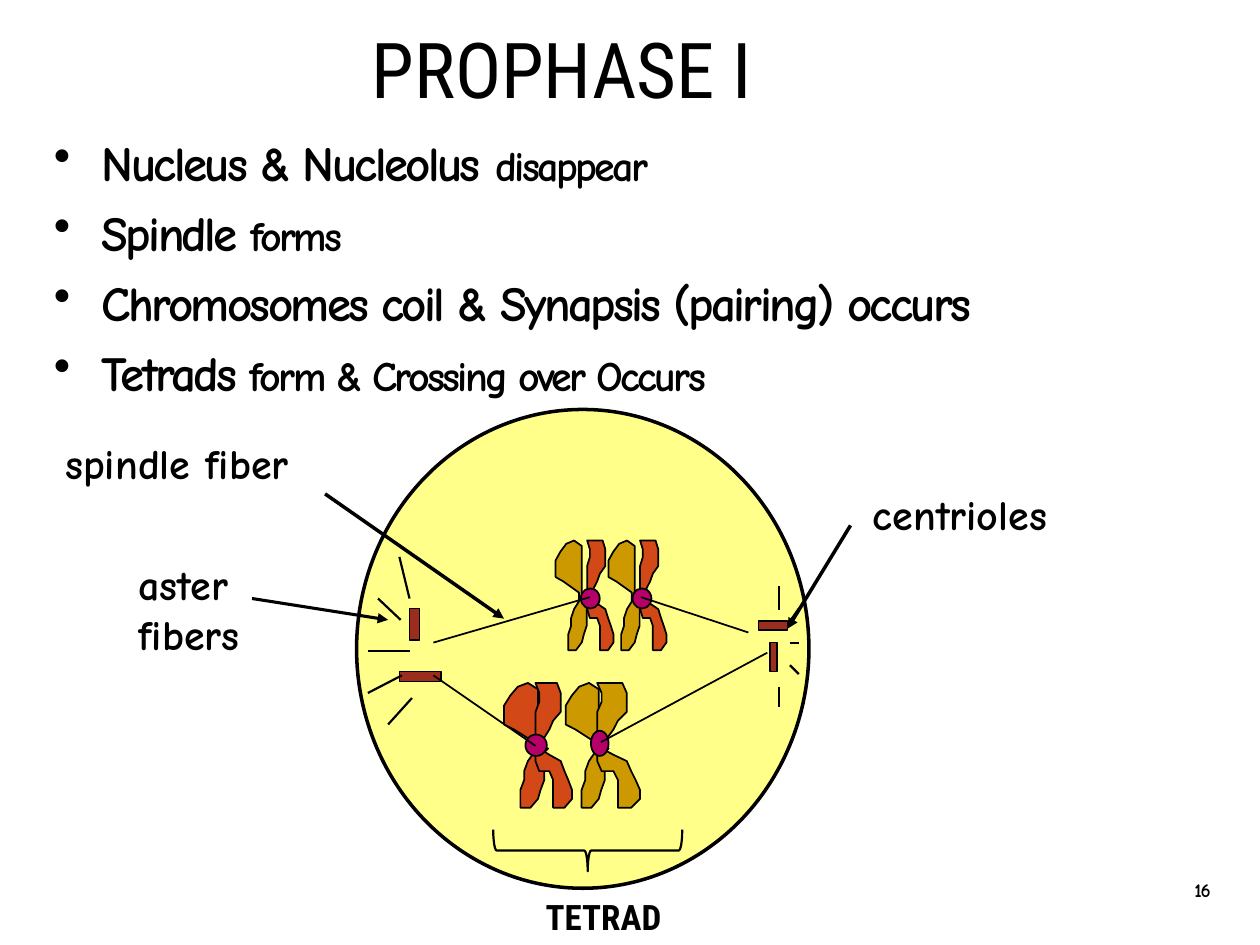
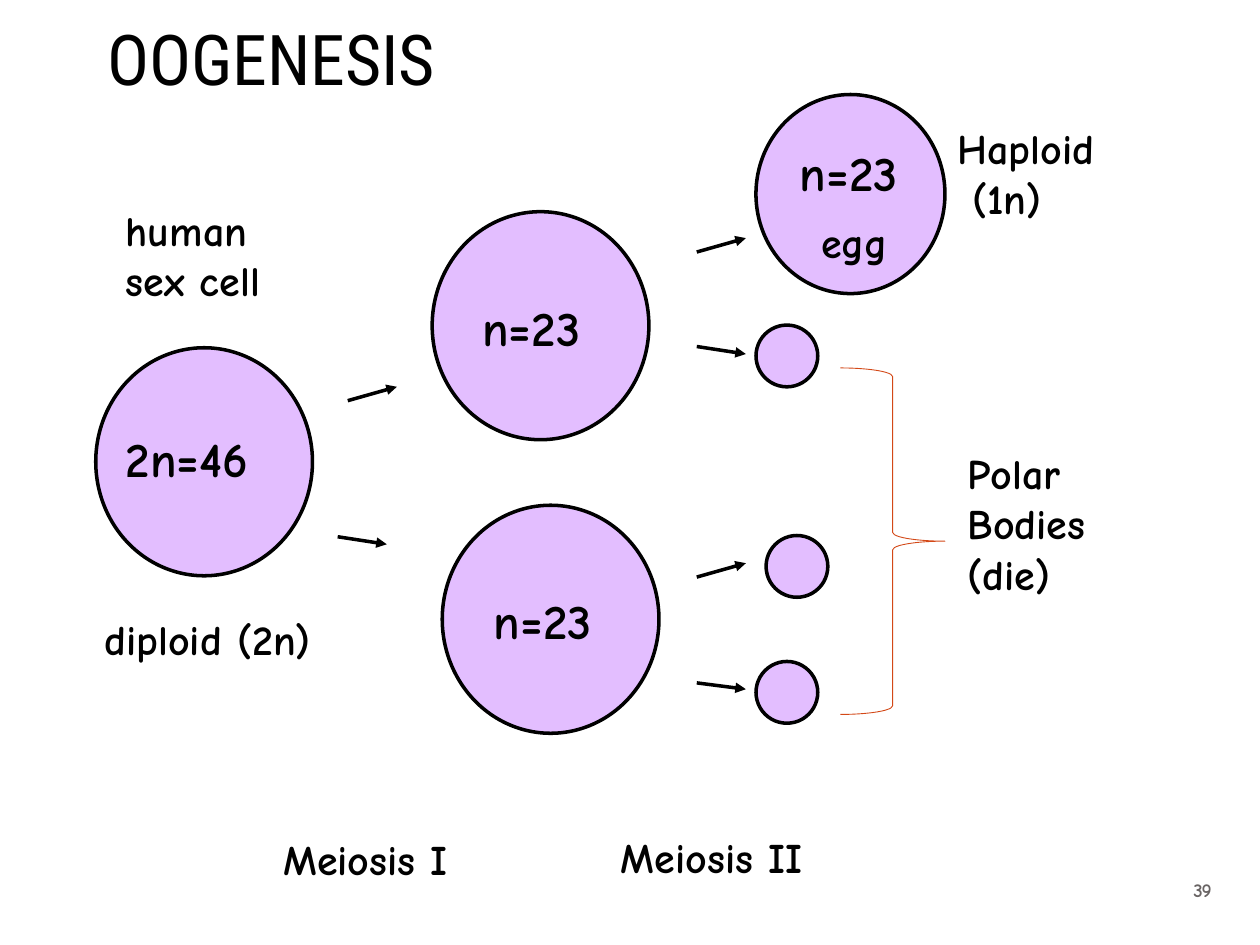
from lxml import etree
from pptx import Presentation
from pptx.dml.color import RGBColor
from pptx.enum import shapes, text
from pptx.oxml import ns
from pptx.util import Inches, Pt

# Shared look
BODY_FONT, TITLE_FONT = "Comic Neue", "Roboto Condensed"
BLACK, GREY = "000000", "696464"
YELLOW, LILAC = "FFFF89", "E3BEFF"
RED, GOLD, BROWN, MAGENTA = "D34817", "CC9900", "9B2D1F", "B50069"
OVAL = shapes.MSO_SHAPE.OVAL
rgb = RGBColor.from_string


def add_shape(slide, preset, box, fill=None, width=1, line=BLACK):
    """Place a preset shape, or paint a finished one passed in its place."""
    shape = preset
    if box:
        shape = slide.shapes.add_shape(preset, *map(Inches, box))
    shape.shadow.inherit = False
    if fill:
        shape.fill.solid()
        shape.fill.fore_color.rgb = rgb(fill)
    else:
        shape.fill.background()
    shape.line.color.rgb = rgb(line)
    shape.line.width = Pt(width)
    return shape


def add_run(paragraph, words, size, font=BODY_FONT, bold=True, colour=BLACK, spacing=0):
    run = paragraph.add_run()
    run.text = words
    run.font.size = Pt(size)
    run.font.name = font
    run.font.bold = bold
    run.font.color.rgb = rgb(colour)
    if spacing:
        run.font._element.set("spc", str(round(spacing * 100)))


prs = Presentation()
prs.slide_width, prs.slide_height = Inches(10), Inches(7.5)
prophase, oogenesis = [prs.slides.add_slide(prs.slide_layouts[5]) for _ in range(2)]

# Titles and slide numbers
for slide, heading, size, align, box, number, number_colour in (
    (prophase, "PROPHASE I", 44, text.PP_ALIGN.CENTER, (0.5, 0.17, 7.92, 0.83), "16", BLACK),
    (oogenesis, "OOGENESIS", 40, text.PP_ALIGN.LEFT, (0.75, 0, 6, 1), "39", GREY),
):
    title = slide.shapes.title
    title.left, title.top, title.width, title.height = map(Inches, box)
    title.text_frame.auto_size = text.MSO_AUTO_SIZE.NONE
    title.text_frame.vertical_anchor = text.MSO_ANCHOR.MIDDLE
    line = title.text_frame.paragraphs[0]
    line.alignment = align
    line.line_spacing = 0.9
    add_run(line, heading, size, TITLE_FONT, bold=False)

    frame = slide.shapes.add_textbox(*map(Inches, (9.28, 6.86, 0.53, 0.4))).text_frame
    frame.word_wrap = True
    frame.vertical_anchor = text.MSO_ANCHOR.MIDDLE
    frame.paragraphs[0].alignment = text.PP_ALIGN.CENTER
    add_run(frame.paragraphs[0], number, 11, colour=number_colour, spacing=-0.7)

# Prophase I: bullets
events = (
    (("Nucleus & Nucleolus ", 28), ("disappear", 24)),
    (("Spindle", 28), (" forms", 24)),
    (("Chromosomes coil & Synapsis (pairing) occurs", 28),),
    (("Tetrads", 28), (" form & Crossing over Occurs", 24)),
)
frame = prophase.shapes.add_textbox(*map(Inches, (0.33, 1, 8.33, 6.17))).text_frame
frame.word_wrap = True
for i, event in enumerate(events):
    paragraph = frame.paragraphs[0] if i == 0 else frame.add_paragraph()
    if i:
        paragraph.space_before = Pt(6.5)
    properties = paragraph._p.get_or_add_pPr()
    properties.set("marL", str(Inches(0.38)))
    properties.set("indent", str(-Inches(0.38)))
    etree.SubElement(properties, ns.qn("a:buChar")).set("char", "•")
    for words, size in event:
        add_run(paragraph, words, size, spacing=-1.5)

# Prophase I: cell and centrioles
add_shape(prophase, OVAL, (2.83, 3.25, 3.59, 3.8), YELLOW, 2)
for centriole in ((6.11, 5.1, 0.06, 0.23), (3.25, 4.83, 0.08, 0.25),
                  (6.02, 4.93, 0.23, 0.07), (3.17, 5.33, 0.33, 0.08)):
    add_shape(prophase, shapes.MSO_SHAPE.RECTANGLE, centriole, BROWN)

# Prophase I: chromosomes, each two chromatids joined by a centromere
LEFT_CHROMATID = (
    (35, 52), (27, 50), (27, 5), (19, 0), (11, 3), (5, 10), (0, 18), (0, 33), (8, 37),
    (16, 42), (24, 47), (24, 55), (19, 62), (16, 70), (16, 77), (13, 85), (13, 99),
    (21, 99), (27, 92), (29, 85), (32, 77), (32, 55))
RIGHT_CHROMATID = (
    (3, 52), (0, 45), (0, 23), (3, 15), (3, 8), (0, 0), (17, 0), (20, 8), (20, 23),
    (14, 30), (11, 37), (6, 45), (3, 52), (11, 57), (20, 62), (23, 70), (26, 77),
    (29, 85), (29, 92), (23, 99), (14, 99), (14, 77), (11, 70), (3, 70), (0, 62), (0, 55))
chromosomes = (
    # left, top, height, left width, right width, colours, centromere
    (4, 5.42, 0.99, 0.35, 0.29, RED, RED, (4.17, 5.83, 0.17, 0.17)),
    (4.83, 4.29, 0.87, 0.27, 0.21, GOLD, RED, (5.02, 4.67, 0.15, 0.16)),
    (4.41, 4.29, 0.87, 0.27, 0.21, GOLD, RED, (4.61, 4.67, 0.15, 0.16)),
    (4.49, 5.42, 0.99, 0.34, 0.34, GOLD, GOLD, (4.69, 5.8, 0.14, 0.2)),
)
for left, top, height, left_width, right_width, left_fill, right_fill, centromere in chromosomes:
    for outline, x, width, units, fill in (
        (LEFT_CHROMATID, left, left_width, 35, left_fill),
        (RIGHT_CHROMATID, left + 0.25, right_width, 29, right_fill),
    ):
        scale = Inches(width) / units, Inches(height) / 99
        builder = prophase.shapes.build_freeform(*outline[0], scale=scale)
        builder.add_line_segments(outline[1:], close=True)
        add_shape(prophase, builder.convert_to_shape(Inches(x), Inches(top)), None, fill)
    add_shape(prophase, OVAL, centromere, MAGENTA)

# Oogenesis: cells, egg and polar bodies
for x, y in ((0.76, 2.76), (3.51, 4.01), (3.43, 1.68)):
    add_shape(oogenesis, OVAL, (x, y, 1.72, 1.81), LILAC, 2)
add_shape(oogenesis, OVAL, (6, 0.75, 1.5, 1.58), LILAC, 2)
for x, y in ((6, 2.58), (6.08, 4.25), (6, 5.25)):
    add_shape(oogenesis, OVAL, (x, y, 0.49, 0.49), LILAC, 2)

# Braces
tetrad_brace = add_shape(prophase, shapes.MSO_SHAPE.LEFT_BRACE, (4.5, 6, 0.33, 1.5), YELLOW, 1.25)
tetrad_brace.rotation = 270
add_shape(oogenesis, shapes.MSO_SHAPE.RIGHT_BRACE, (6.67, 2.92, 0.83, 2.75), None, 0.5, RED)

# Fibers, pointers and division arrows
aster_fibers = (
    (3.27, 5.54, 3.08, 5.75), (3.19, 5.36, 2.92, 5.5), (2.92, 5.17, 3.25, 5.17),
    (3, 4.75, 3.18, 4.92), (3.17, 4.42, 3.25, 4.75), (6.18, 4.84, 6.18, 4.65),
    (6.27, 4.93, 6.34, 4.83), (6.27, 5.1, 6.34, 5.1), (6.27, 5.28, 6.34, 5.35),
    (6.18, 5.45, 6.18, 5.61))
spindle_fibers = (
    (3.44, 5.1, 4.68, 4.74), (5.94, 5.02, 5.09, 4.74),
    (4.77, 5.89, 6.09, 5.18), (3.44, 5.36, 4.25, 5.92))
division_arrows = (
    (2.76, 3.18, 3.15, 3.07), (2.68, 4.26, 3.07, 4.32), (5.53, 2, 5.92, 1.89),
    (5.53, 2.75, 5.92, 2.81), (5.53, 4.58, 5.92, 4.47), (5.53, 5.42, 5.92, 5.47))
for slide, lines, width, arrow in (
    (prophase, aster_fibers, 1.25, False),
    (prophase, spindle_fibers, 1, False),
    (prophase, ((2, 4.75, 3.08, 4.92),), 1.75, True),
    (prophase, ((2.58, 3.92, 4, 4.91), (6.75, 4.17, 6.25, 4.99)), 2, True),
    (oogenesis, division_arrows, 2, True),
):
    for ends in lines:
        connector = slide.shapes.add_connector(
            shapes.MSO_CONNECTOR.STRAIGHT, *map(Inches, ends))
        connector.line.color.rgb = rgb(BLACK)
        connector.line.width = Pt(width)
        if arrow:
            tail = etree.SubElement(connector.line._get_or_add_ln(), ns.qn("a:tailEnd"))
            tail.set("type", "triangle")
        etree.SubElement(connector._element.spPr, ns.qn("a:effectLst"))

# Labels that keep to their own lines
for slide, words, size, box in (
    (prophase, "centrioles", 24, (6.83, 3.83, 1.77, 0.5)),
    (prophase, "spindle fiber", 24, (0.42, 3.42, 2.26, 0.5)),
    (prophase, "aster\nfibers", 24, (1, 4.38, 1.18, 0.91)),
    (oogenesis, "2n=46", 28, (0.9, 3.35, 1.37, 0.57)),
    (oogenesis, "human\nsex cell", 24, (0.9, 1.57, 1.44, 0.91)),
    (oogenesis, "diploid (2n)", 24, (0.73, 4.82, 2.01, 0.5)),
    (oogenesis, "n=23", 28, (3.73, 2.31, 1.12, 0.57)),
    (oogenesis, "n=23", 28, (3.82, 4.64, 1.12, 0.57)),
    (oogenesis, "Meiosis I", 24, (2.15, 6.57, 1.71, 0.5)),
    (oogenesis, "n=23", 28, (6.25, 1.08, 1.12, 0.57)),
    (oogenesis, "egg", 24, (6.42, 1.67, 0.74, 0.5)),
    (oogenesis, "Haploid\n (1n)", 24, (7.5, 0.92, 1.39, 0.91)),
    (oogenesis, "Meiosis II", 24, (4.83, 6.55, 1.89, 0.5)),
):
    frame = slide.shapes.add_textbox(*map(Inches, box)).text_frame
    frame.word_wrap = False
    frame.auto_size = text.MSO_AUTO_SIZE.SHAPE_TO_FIT_TEXT
    for i, line in enumerate(words.split("\n")):
        add_run(frame.add_paragraph() if i else frame.paragraphs[0], line, size)

# Wrapped brace captions
for slide, words, size, font, align, box in (
    (prophase, "TETRAD", 20, TITLE_FONT, text.PP_ALIGN.CENTER, (3.75, 7.06, 2.08, 0.44)),
    (oogenesis, "Polar Bodies (die)", 24, BODY_FONT, text.PP_ALIGN.LEFT, (7.58, 3.5, 1.33, 1.31)),
):
    frame = slide.shapes.add_textbox(*map(Inches, box)).text_frame
    frame.word_wrap = True
    frame.auto_size = text.MSO_AUTO_SIZE.SHAPE_TO_FIT_TEXT
    frame.paragraphs[0].alignment = align
    add_run(frame.paragraphs[0], words, size, font)

prs.save("out.pptx")
